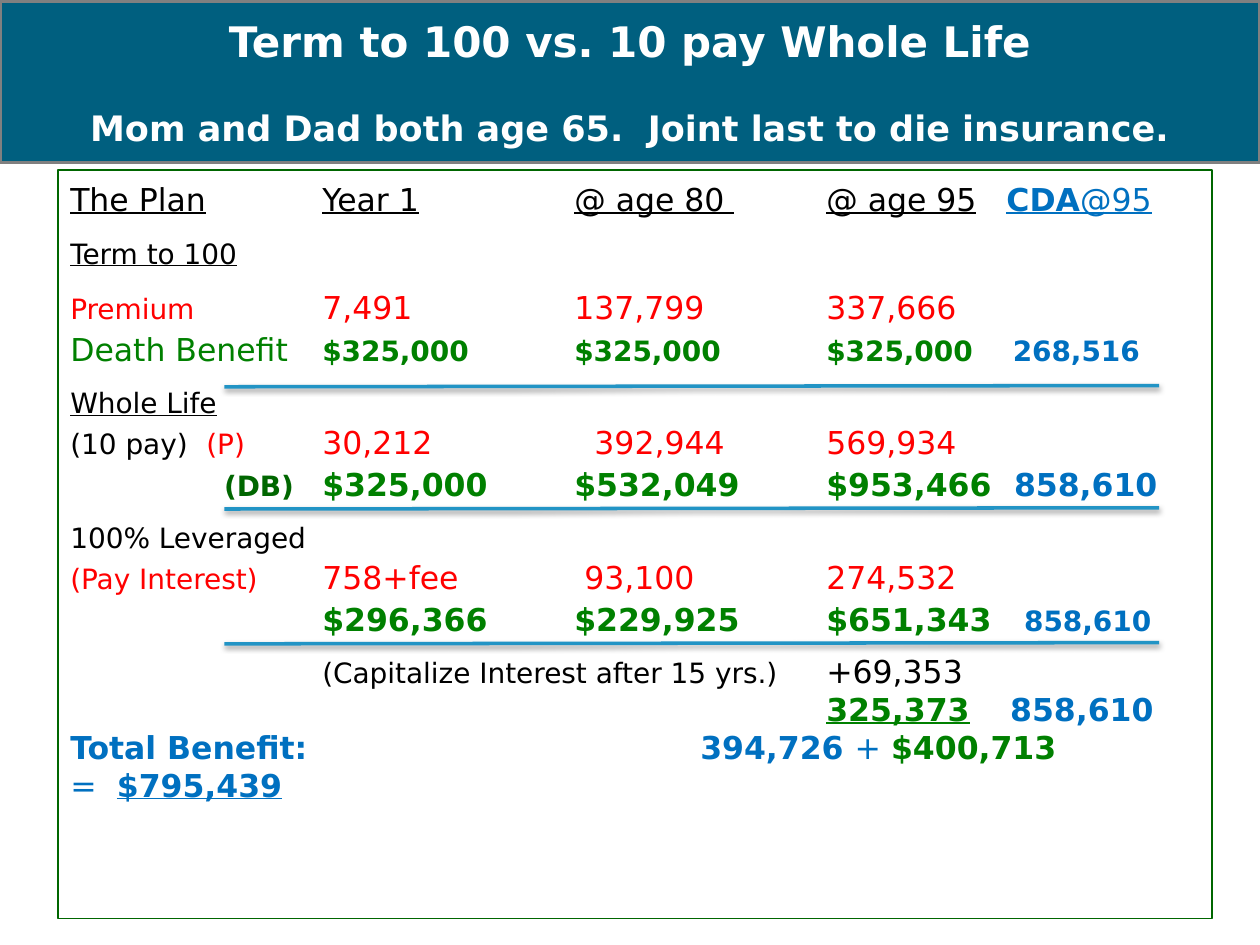
from dataclasses import dataclass

from lxml.etree import SubElement
from pptx import Presentation
from pptx.dml.color import RGBColor
from pptx.enum.shapes import MSO_CONNECTOR as CONN, MSO_SHAPE as SHAPE
from pptx.enum.text import MSO_ANCHOR as ANCHOR, PP_ALIGN as ALIGN
from pptx.oxml import parse_xml
from pptx.oxml.ns import nsdecls, qn
from pptx.util import Inches, Pt

FONT = "DejaVu Sans"
BLACK = RGBColor(0x00, 0x00, 0x00)
WHITE = RGBColor(0xFF, 0xFF, 0xFF)
RED = RGBColor(0xFF, 0x00, 0x00)
GREEN = RGBColor(0x00, 0x80, 0x00)
DARK_GREEN = RGBColor(0x00, 0x66, 0x00)
BLUE = RGBColor(0x00, 0x70, 0xC0)
RULE_BLUE = RGBColor(0x22, 0x94, 0xC5)
BANNER = RGBColor(0x00, 0x5F, 0x7F)
GRAY = RGBColor(0x80, 0x80, 0x80)
COLUMNS = (2, 4, 6)


@dataclass
class Span:
    text: str
    color: RGBColor = BLACK
    size: int = 18
    bold: bool = False
    underline: bool = False


@dataclass
class Row:
    spans: list[Span]
    stops: tuple = COLUMNS
    before: float = 0
    spacing: float = 1.1


GAP = 8.5
ROWS = [
    Row([Span("The Plan\tYear 1\t@ age 80 \t@ age 95\t", underline=True),
         Span("CDA", BLUE, bold=True, underline=True),
         Span("@95", BLUE, underline=True)], (*COLUMNS, 7.43)),
    Row([Span("Term to 100", size=16, underline=True)], before=GAP),
    Row([Span("Premium\t", RED, 16), Span("7,491\t137,799\t337,666", RED)], before=GAP),
    Row([Span("Death Benefit\t", GREEN),
         Span("$325,000\t$325,000\t$325,000\t", GREEN, 16, True),
         Span("268,516", BLUE, 16, True)], (*COLUMNS, 7.48)),
    Row([Span("Whole Life", size=16, underline=True)], before=GAP),
    Row([Span("(10 pay)\t", size=16), Span("(P)\t", RED, 16),
         Span("30,212\t392,944\t569,934", RED)], (1.08, 2, 4.16, 6)),
    Row([Span("\t(DB)\t", DARK_GREEN, 16, True),
         Span("$325,000\t$532,049\t$953,466\t", GREEN, bold=True),
         Span("858,610", BLUE, bold=True)], (1.22, *COLUMNS, 7.49)),
    Row([Span("100% Leveraged", size=16)], before=GAP),
    Row([Span("(Pay Interest)\t", RED, 16), Span("758+fee\t93,100\t274,532", RED)],
        (2, 4.08, 6)),
    Row([Span("\t$296,366\t$229,925\t$651,343\t", GREEN, bold=True),
         Span("858,610", BLUE, 16, True)], (*COLUMNS, 7.57)),
    Row([Span("\t(Capitalize Interest after 15 yrs.)\t", size=16), Span("+69,353")],
        (2, 6), GAP, 1),
    Row([Span("\t"), Span("325,373", GREEN, bold=True, underline=True),
         Span("\t858,610", BLUE, bold=True)], (6, 7.46), spacing=1),
    Row([Span("Total Benefit:\t394,726 ", BLUE, bold=True), Span("+ ", BLUE),
         Span("$400,713", GREEN, bold=True)], (5,), spacing=1),
    Row([Span("=\t", BLUE), Span("$795,439", BLUE, bold=True, underline=True)],
        (0.37,), spacing=1),
]
TITLE = [
    Row([Span("Term to 100 vs. 10 pay Whole Life", WHITE, 24, True)], (), spacing=1),
    Row([Span("Mom and Dad both age 65.  Joint last to die insurance.", WHITE, 20, True)],
        (), 23.5, 1),
]


def add_panel(slide, box: tuple, line: RGBColor, width: float, rows: list[Row],
              align: ALIGN, anchor: ANCHOR, fill: RGBColor | None = None) -> None:
    """Draw an outlined rectangle holding rows of formatted text."""
    sp = slide.shapes.add_shape(SHAPE.RECTANGLE, *map(Inches, box))
    sp.shadow.inherit = False
    if fill is None:
        sp.fill.background()
    else:
        sp.fill.solid()
        sp.fill.fore_color.rgb = fill
    sp.line.color.rgb = line
    sp.line.width = Pt(width)
    tf = sp.text_frame
    tf.word_wrap = True
    tf.vertical_anchor = anchor
    for i, row in enumerate(rows):
        p = tf.paragraphs[0] if i == 0 else tf.add_paragraph()
        add_row(p, row, align)


def add_row(p, row: Row, align: ALIGN) -> None:
    """Fill a paragraph with one row, its tab stops and its spacing."""
    p.alignment = align
    p.line_spacing = row.spacing
    p.space_before = Pt(row.before)
    if row.stops:
        tabs = SubElement(p._p.get_or_add_pPr(), qn("a:tabLst"))
        for stop in row.stops:
            SubElement(tabs, qn("a:tab"), pos=str(Inches(stop)), algn="l")
    for span in row.spans:
        r = p.add_run()
        r.text = span.text
        r.font.name = FONT
        r.font.size = Pt(span.size)
        r.font.bold = span.bold
        r.font.underline = span.underline
        r.font.color.rgb = span.color


def add_rule(slide, y: float) -> None:
    """Draw a slightly rising divider with a soft shadow below it."""
    cx = slide.shapes.add_connector(CONN.STRAIGHT, Inches(1.78), Inches(y),
                                    Inches(9.2), Inches(y - 0.01))
    cx.line.color.rgb = RULE_BLUE
    cx.line.width = Pt(2)
    cx._element.spPr.append(parse_xml(
        f'<a:effectLst {nsdecls("a")}><a:outerShdw blurRad="{Pt(3.1)}" '
        f'dist="{Pt(1.6)}" dir="5400000" rotWithShape="0"><a:srgbClr val="000000">'
        '<a:alpha val="38000"/></a:srgbClr></a:outerShdw></a:effectLst>'))


def main() -> None:
    """Build the insurance comparison slide."""
    prs = Presentation()
    prs.slide_width, prs.slide_height = Inches(10), Inches(7.5)
    slide = prs.slides.add_slide(prs.slide_layouts[6])
    add_panel(slide, (0.46, 1.35, 9.16, 5.94), DARK_GREEN, 0.75, ROWS,
              ALIGN.LEFT, ANCHOR.TOP)
    for y in (3.07, 4.04, 5.11):
        add_rule(slide, y)
    add_panel(slide, (0, 0.01, 10, 1.28), GRAY, 2, TITLE,
              ALIGN.CENTER, ANCHOR.MIDDLE, BANNER)
    prs.save("out.pptx")


if __name__ == "__main__":
    main()
